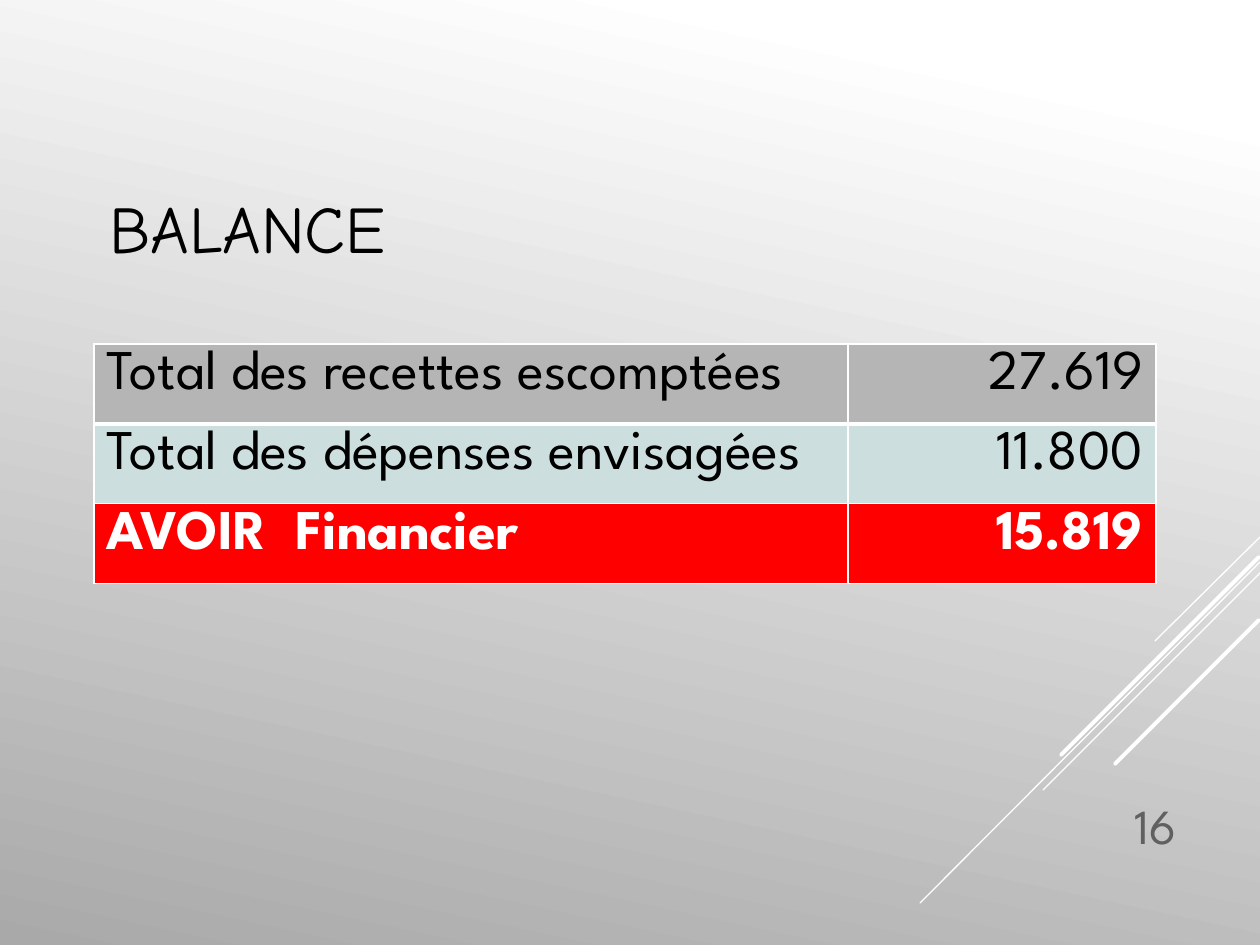
from lxml import etree
from pptx import Presentation
from pptx import util as u
from pptx.dml.color import RGBColor
from pptx.enum import shapes, text
from pptx.oxml.ns import qn

SCALE = 914400 / 126


def px(length):
    return u.Emu(round(length * SCALE))


def color(value):
    return RGBColor.from_string(value)


class SlideBuilder:
    body_font = "League Spartan"
    title_font = "Comic Neue"
    rule = "FFFFFF"

    def __init__(self, deck):
        self.slide = deck.slides.add_slide(deck.slide_layouts[6])

    def background(self, stops, angle):
        fill = self.slide.background.fill
        fill.gradient()
        fill.gradient_angle = 360 - angle
        for stop, (position, value) in zip(fill.gradient_stops, stops):
            stop.position = position
            stop.color.rgb = color(value)

    def line(self, start, end, width):
        connector = self.slide.shapes.add_connector(
            shapes.MSO_CONNECTOR.STRAIGHT, *map(px, start + end))
        connector.line.color.rgb = color(self.rule)
        connector.line.width = u.Pt(width)
        properties = connector._element.spPr
        properties.find(qn("a:ln")).set("cap", "rnd")
        etree.SubElement(properties, qn("a:effectLst"))

    def fill_text(self, frame, words, align, ink, **font):
        para = frame.paragraphs[0]
        para.alignment = align
        span = para.add_run()
        span.text = words
        span.font.color.rgb = color(ink)
        for name, value in font.items():
            setattr(span.font, name, value)

    def text_box(self, place, words, anchor, align, ink, **font):
        box = self.slide.shapes.add_textbox(*map(px, place))
        frame = box.text_frame
        frame.word_wrap = True
        frame.vertical_anchor = anchor
        self.fill_text(frame, words, align, ink, **font)

    def borders(self, cell, widths):
        properties = cell._tc.get_or_add_tcPr()
        for index, (side, width) in enumerate(zip("LRTB", widths)):
            edge = etree.Element(qn(f"a:ln{side}"), w=str(u.Pt(width)))
            fill = etree.SubElement(edge, qn("a:solidFill"))
            etree.SubElement(fill, qn("a:srgbClr"), val=self.rule)
            properties.insert(index, edge)

    def table(self, left, top, widths, height, rows):
        frame = self.slide.shapes.add_table(
            len(rows), len(widths), px(left), px(top),
            px(sum(widths)), px(height * len(rows)))
        table = frame.table
        table.first_row = table.horz_banding = False
        for column, width in zip(table.columns, widths):
            column.width = px(width)
        aligns = text.PP_ALIGN.LEFT, text.PP_ALIGN.RIGHT
        for r, (words, fill, ink, bold) in enumerate(rows):
            table.rows[r].height = px(height)
            edges = (1, 1, 3 if r == 1 else 1, 3 if r == 0 else 1)
            for c, (word, align) in enumerate(zip(words, aligns)):
                cell = table.cell(r, c)
                cell.fill.solid()
                cell.fill.fore_color.rgb = color(fill)
                self.borders(cell, edges)
                self.fill_text(cell.text_frame, word, align, ink,
                               name=self.body_font, size=u.Pt(32), bold=bold)


def main():
    deck = Presentation()
    deck.slide_width, deck.slide_height = px(1260), px(945)
    page = SlideBuilder(deck)
    page.background([(0.1, "FFFFFF"), (1, "A9A9A9")], 102)

    for start, end, width in [
        ((1260, 537), (1155, 641), 0.75),
        ((1260, 562), (920, 903), 0.75),
        ((1260, 573), (1043, 790), 0.75),
        ((1259, 557), (1061, 755), 2.25),
        ((1259, 620), (1115, 764), 2.25),
    ]:
        page.line(start, end, width)

    page.text_box((97, 122, 903, 210), "BALANCE", text.MSO_ANCHOR.MIDDLE,
                  text.PP_ALIGN.LEFT, "000000",
                  name=page.title_font, size=u.Pt(38))
    page.table(94, 344, (754, 308), 64, [
        (("Total des recettes escomptées", "27.619"), "B5B5B5", "000000", False),
        (("Total des dépenses envisagées", "11.800"), "CCDEDE", "000000", False),
        (("AVOIR  Financier", "15.819"), "FF0000", "FFFFFF", True),
    ])
    page.text_box((1071, 769, 118, 92), "16", text.MSO_ANCHOR.BOTTOM,
                  text.PP_ALIGN.RIGHT, "606060",
                  name=page.body_font, size=u.Pt(28))
    deck.save("out.pptx")


if __name__ == "__main__":
    main()
